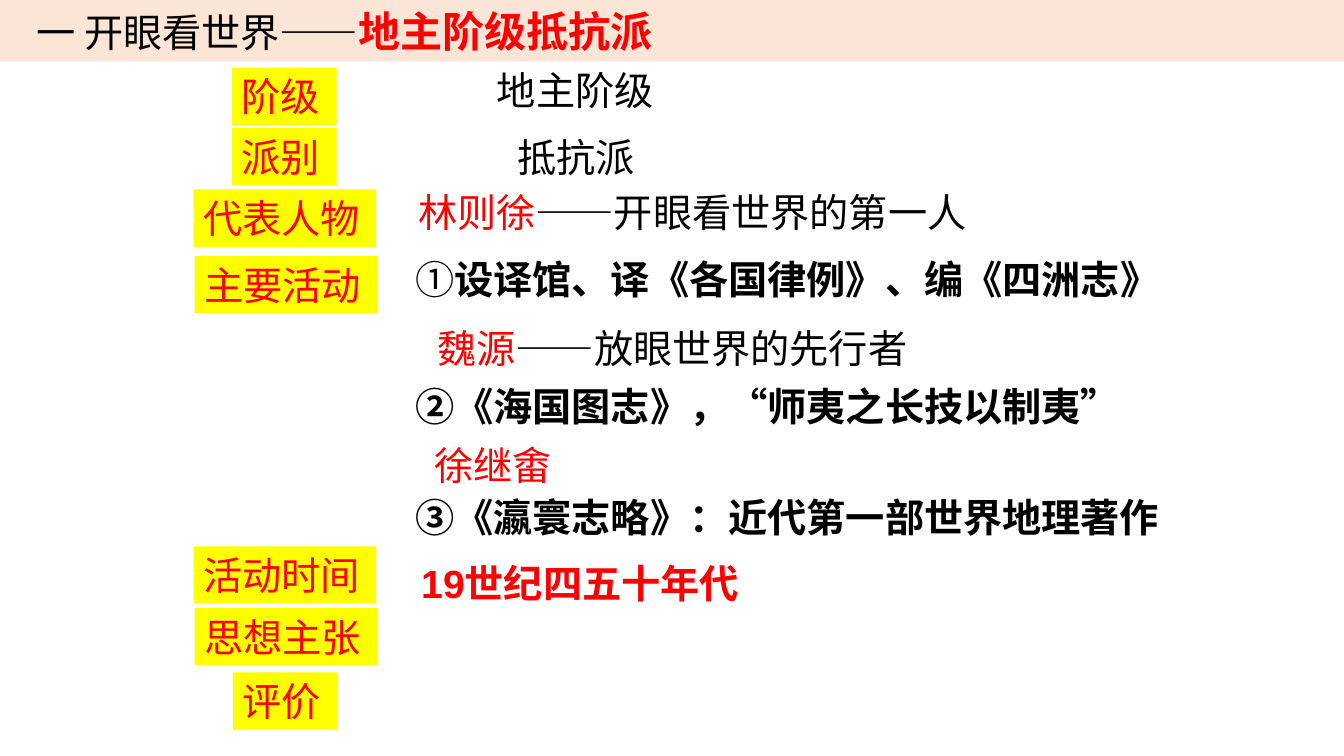
from pptx import Presentation
from pptx.dml.color import RGBColor
from pptx.enum.shapes import MSO_SHAPE
from pptx.enum.text import MSO_ANCHOR as ANCHOR, MSO_AUTO_SIZE as AUTO, PP_ALIGN
from pptx.oxml.ns import qn
from pptx.util import Inches, Pt

COLORS = {"band": "FBE5D6", "label": "FFFF00", "red": "FF0000", "black": "000000"}
CJK = "Noto Sans CJK SC"
ROW_HEIGHT = 0.57


def fill(shape, color):
    shape.fill.solid()
    shape.fill.fore_color.rgb = RGBColor.from_string(COLORS[color])


def write(shape, text, color="black", size=28, bold=False, font=CJK,
          anchor=ANCHOR.TOP, wrap=False):
    """Append one formatted run to the first paragraph of a shape."""
    frame = shape.text_frame
    frame.auto_size = AUTO.NONE
    frame.word_wrap = wrap
    frame.vertical_anchor = anchor
    paragraph = frame.paragraphs[0]
    paragraph.alignment = PP_ALIGN.LEFT
    run = paragraph.add_run()
    run.text = text
    run.font.name = font
    run.font.size = Pt(size)
    run.font.bold = bold
    run.font.color.rgb = RGBColor.from_string(COLORS[color])
    east_asian = run.font._element.makeelement(qn("a:ea"), {"typeface": CJK})
    run.font._element.find(qn("a:latin")).addnext(east_asian)


prs = Presentation()
prs.slide_width = Inches(13.33)
prs.slide_height = Inches(7.5)
slide = prs.slides.add_slide(prs.slide_layouts[5])

# Title band
title = slide.shapes.title
title.left, title.top = Inches(0), Inches(0)
title.width, title.height = Inches(13.33), Inches(0.61)
fill(title, "band")
title.text_frame.margin_left = Inches(0.36)
write(title, "一 开眼看世界——", anchor=ANCHOR.MIDDLE)
write(title, "地主阶级抵抗派", color="red", size=30, bold=True, anchor=ANCHOR.MIDDLE)

# Yellow labels: topic, left, top
labels = [
    ("阶级", 2.3, 0.67),
    ("派别", 2.3, 1.27),
    ("代表人物", 1.92, 1.88),
    ("主要活动", 1.93, 2.54),
    ("活动时间", 1.92, 5.42),
    ("思想主张", 1.93, 6.03),
    ("评价", 2.31, 6.67),
]
for topic, left, top in labels:
    width = 1.04 if len(topic) == 2 else 1.81
    label = slide.shapes.add_shape(MSO_SHAPE.RECTANGLE, Inches(left), Inches(top),
                                   Inches(width), Inches(ROW_HEIGHT))
    label.shadow.inherit = False
    label.line.fill.background()
    fill(label, "label")
    write(label, topic, color="red", anchor=ANCHOR.MIDDLE)

# Answers: left, top, width, runs with their format
red, bold = {"color": "red"}, {"bold": True}
period = {"color": "red", "bold": True, "font": "Arial", "wrap": True}
answers = [
    (4.83, 0.61, 1.77, [("地主阶级", {})]),
    (5.03, 1.27, 1.38, [("抵抗派", {})]),
    (4.05, 1.82, 5.7, [("林则徐", red), ("——开眼看世界的第一人", {})]),
    (4.02, 2.48, 7.69, [("①", {}), ("设译馆、译《各国律例》、编《四洲志》", bold)]),
    (4.24, 3.17, 4.91, [("魏源", red), ("——放眼世界的先行者", {})]),
    (4.02, 3.74, 7.3, [("②《海国图志》，“师夷之长技以制夷”", bold)]),
    (4.21, 4.33, 1.38, [("徐继畬", red)]),
    (4.02, 4.84, 7.7, [("③《瀛寰志略》：近代第一部世界地理著作", bold)]),
    (4.08, 5.5, 3.4, [("19世纪四五十年代", period)]),
]
for left, top, width, runs in answers:
    answer = slide.shapes.add_textbox(Inches(left), Inches(top),
                                      Inches(width), Inches(ROW_HEIGHT))
    for text, style in runs:
        write(answer, text, **style)

prs.save("out.pptx")
